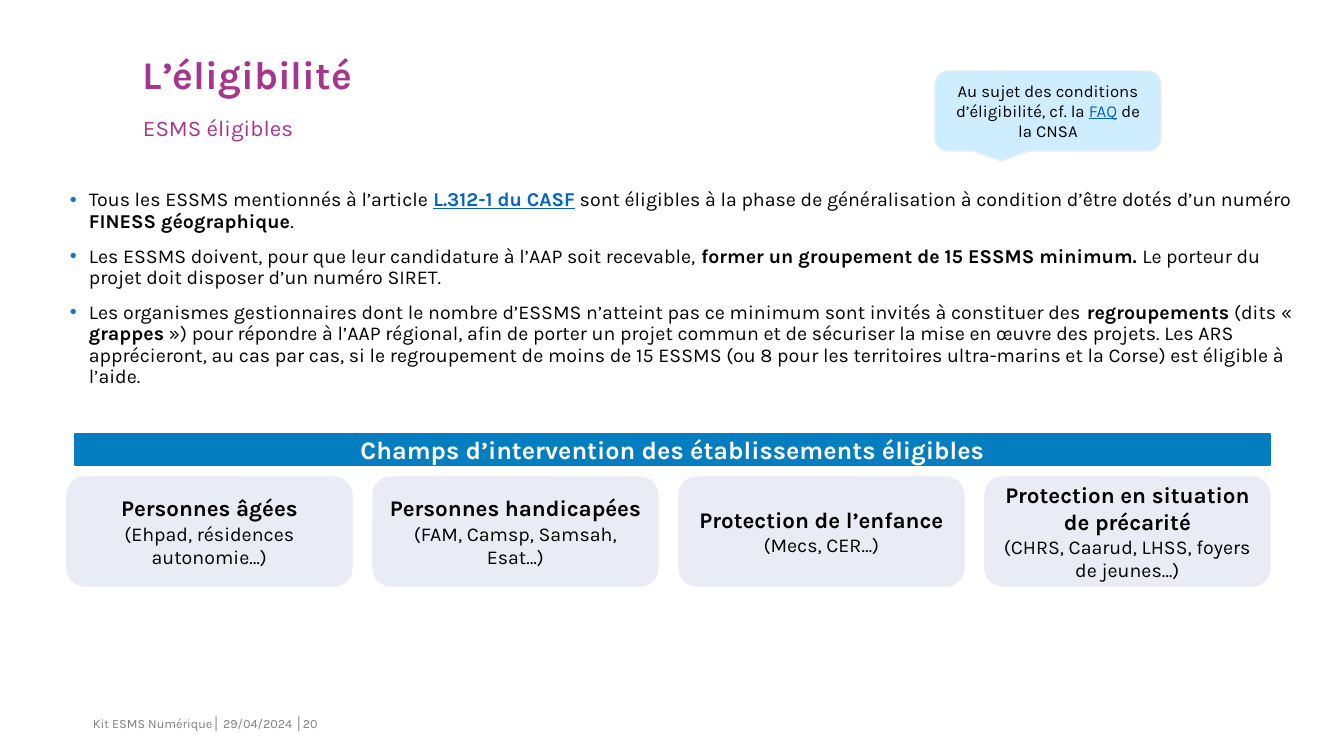
from lxml.etree import SubElement
from pptx import Presentation
from pptx.dml.color import RGBColor
from pptx.enum.shapes import MSO_SHAPE as Preset
from pptx.enum.text import MSO_ANCHOR as Anchor, PP_ALIGN as Align
from pptx.oxml.ns import qn
from pptx.util import Emu, Pt

SCALE = 12192000 / 1344
FONT = "Karla"
PURPLE = RGBColor(0xA7, 0x35, 0x8C)
BLUE = RGBColor(0x05, 0x7E, 0xC1)
LINK = RGBColor(0x05, 0x63, 0xC1)
SKY = RGBColor(0xCE, 0xED, 0xFE)
LAVENDER = RGBColor(0xE9, 0xEB, 0xF5)
GREY = RGBColor(0x80, 0x80, 0x80)
BLACK = RGBColor(0, 0, 0)
WHITE = RGBColor(255, 255, 255)

BOLD = {"bold": True}
LINKED = {"underline": True, "color": LINK}
RULES = [
    [("Tous les ESSMS mentionnés à l’article ", {}),
     ("L.312-1 du CASF", {**BOLD, **LINKED}),
     (" sont éligibles à la phase de généralisation à condition d’être dotés d’un numéro ", {}),
     ("FINESS géographique", BOLD), (".", {})],
    [("Les ESSMS doivent, pour que leur candidature à l’AAP soit recevable, ", {}),
     ("former un groupement de 15 ESSMS minimum. ", BOLD),
     ("Le porteur du projet doit disposer d’un numéro SIRET.", {})],
    [("Les organismes gestionnaires dont le nombre d’ESSMS n’atteint pas ce minimum "
      "sont invités à constituer des ", {}),
     ("regroupements", BOLD), (" (dits « ", {}), ("grappes", BOLD),
     (" ») pour répondre à l’AAP régional, afin de porter un projet commun et de sécuriser "
      "la mise en œuvre des projets. Les ARS apprécieront, au cas par cas, si le regroupement "
      "de moins de 15 ESSMS (ou 8 pour les territoires ultra-marins et la Corse) "
      "est éligible à l’aide.", {})],
]
FIELDS = [
    ("Personnes âgées", "(Ehpad, résidences autonomie…)"),
    ("Personnes handicapées", "(FAM, Camsp, Samsah, Esat…)"),
    ("Protection de l’enfance", "(Mecs, CER…)"),
    ("Protection en situation de précarité", "(CHRS, Caarud, LHSS, foyers de jeunes…)"),
]


def px(*lengths):
    """Turn pixel lengths into EMU."""
    return [Emu(round(length * SCALE)) for length in lengths]


def write_runs(paragraph, runs, size, color=BLACK):
    """Add styled runs to a paragraph."""
    for text, style in runs:
        run = paragraph.add_run()
        run.text = text
        look = {"name": FONT, "size": Pt(size), "bold": False, **style}
        run.font.color.rgb = look.pop("color", color)
        for key, value in look.items():
            setattr(run.font, key, value)


def set_frame(frame, **settings):
    """Apply wrapping and frame settings."""
    for key, value in {"word_wrap": True, **settings}.items():
        setattr(frame, key, value)


def add_panel(slide, preset, box, fill, line):
    """Draw a filled shape and return its centred text frame."""
    panel = slide.shapes.add_shape(preset, *px(*box))
    panel.shadow.inherit = False
    panel.fill.solid()
    panel.fill.fore_color.rgb = fill
    panel.line.color.rgb = line
    panel.line.width = Pt(1)
    set_frame(panel.text_frame, vertical_anchor=Anchor.MIDDLE)
    panel.text_frame.paragraphs[0].alignment = Align.CENTER
    return panel.text_frame


def add_heading(slide, left, top, width):
    """Place the title and the subtitle under it."""
    title = slide.shapes.title
    title.left, title.top, title.width, title.height = px(left, top, width, 42)
    subtitle = slide.shapes.add_textbox(*px(left, top + 61, width, 24))
    flush = dict.fromkeys(("margin_left", "margin_top", "margin_right", "margin_bottom"), 0)
    for holder, text, size, bold in ((title, "L’éligibilité", 28, True),
                                     (subtitle, "ESMS éligibles", 16, False)):
        set_frame(holder.text_frame, vertical_anchor=Anchor.TOP, **flush)
        paragraph = holder.text_frame.paragraphs[0]
        paragraph.alignment = Align.LEFT
        paragraph.line_spacing = 0.9
        write_runs(paragraph, [(text, {"bold": bold})], size, PURPLE)


def add_faq_callout(slide, box):
    """Place the callout about the FAQ."""
    frame = add_panel(slide, Preset.ROUNDED_RECTANGULAR_CALLOUT, box, SKY, LAVENDER)
    write_runs(frame.paragraphs[0], [("Au sujet des conditions d’éligibilité, cf. la ", {}),
                                     ("FAQ", LINKED), (" de la CNSA", {})], 12)


def add_rules(slide, box):
    """Place the bulleted eligibility rules."""
    frame = slide.shapes.add_textbox(*px(*box)).text_frame
    set_frame(frame)
    indent = px(19)[0]
    for index, runs in enumerate(RULES):
        paragraph = frame.add_paragraph() if index else frame.paragraphs[0]
        paragraph.line_spacing = 0.9
        paragraph.space_before = Pt(10 if index else 0)
        properties = paragraph._p.get_or_add_pPr()
        properties.set("marL", str(indent))
        properties.set("indent", str(-indent))
        bullet_color = SubElement(properties, qn("a:buClr"))
        SubElement(bullet_color, qn("a:srgbClr"), val=str(BLUE))
        SubElement(properties, qn("a:buFont"), typeface="Arial")
        SubElement(properties, qn("a:buChar"), char="•")
        write_runs(paragraph, runs, 14)


def add_banner(slide, box):
    """Place the banner above the fields."""
    frame = add_panel(slide, Preset.RECTANGLE, box, BLUE, BLUE)
    write_runs(frame.paragraphs[0],
               [("Champs d’intervention des établissements éligibles", BOLD)], 18, WHITE)


def add_fields(slide, left, top, width, height, gap=21):
    """Spread one card per field over the box."""
    card_width = (width - gap * (len(FIELDS) - 1)) / len(FIELDS)
    for index, (field, examples) in enumerate(FIELDS):
        box = left + index * (card_width + gap), top, card_width, height
        frame = add_panel(slide, Preset.ROUNDED_RECTANGLE, box, LAVENDER, LAVENDER)
        write_runs(frame.paragraphs[0], [(field, BOLD)], 16)
        detail = frame.add_paragraph()
        detail.alignment = Align.CENTER
        write_runs(detail, [(examples, {})], 14)


def add_footer(slide, box):
    """Place the footer line."""
    frame = slide.shapes.add_textbox(*px(*box)).text_frame
    set_frame(frame, margin_left=0)
    write_runs(frame.paragraphs[0], [("Kit ESMS Numérique│ 29/04/2024 │20", {})], 9, GREY)


def main():
    """Build and save the slide."""
    deck = Presentation()
    deck.slide_width, deck.slide_height = px(1344, 756)
    slide = deck.slides.add_slide(deck.slide_layouts[5])
    add_footer(slide, (93, 711, 580, 40))
    add_heading(slide, 143, 56, 1117)
    add_rules(slide, (60, 185, 1255, 154))
    add_banner(slide, (75, 434, 1195, 31))
    add_faq_callout(slide, (935, 71, 226, 80))
    add_fields(slide, 67, 477, 1203, 109)
    deck.save("out.pptx")


if __name__ == "__main__":
    main()
